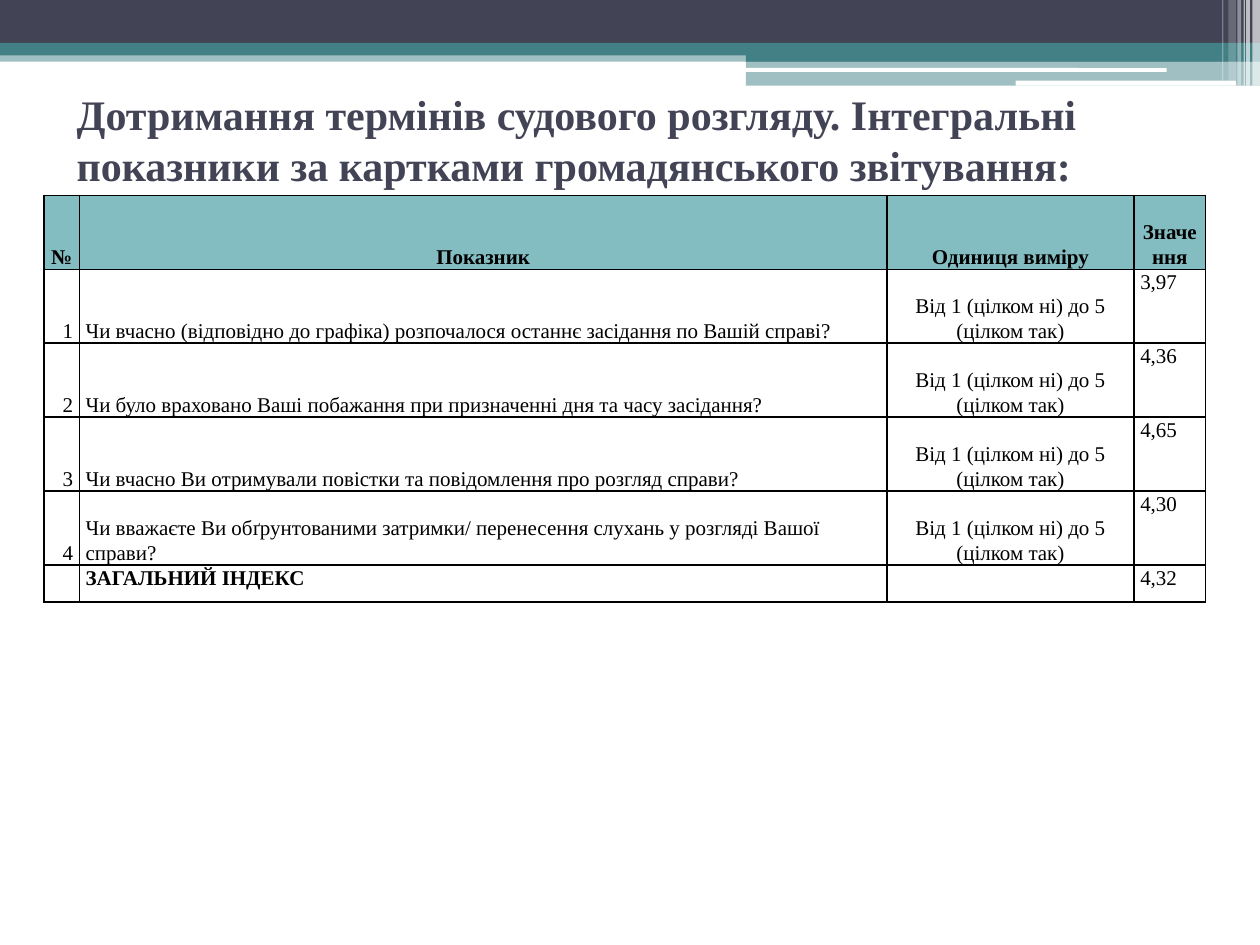
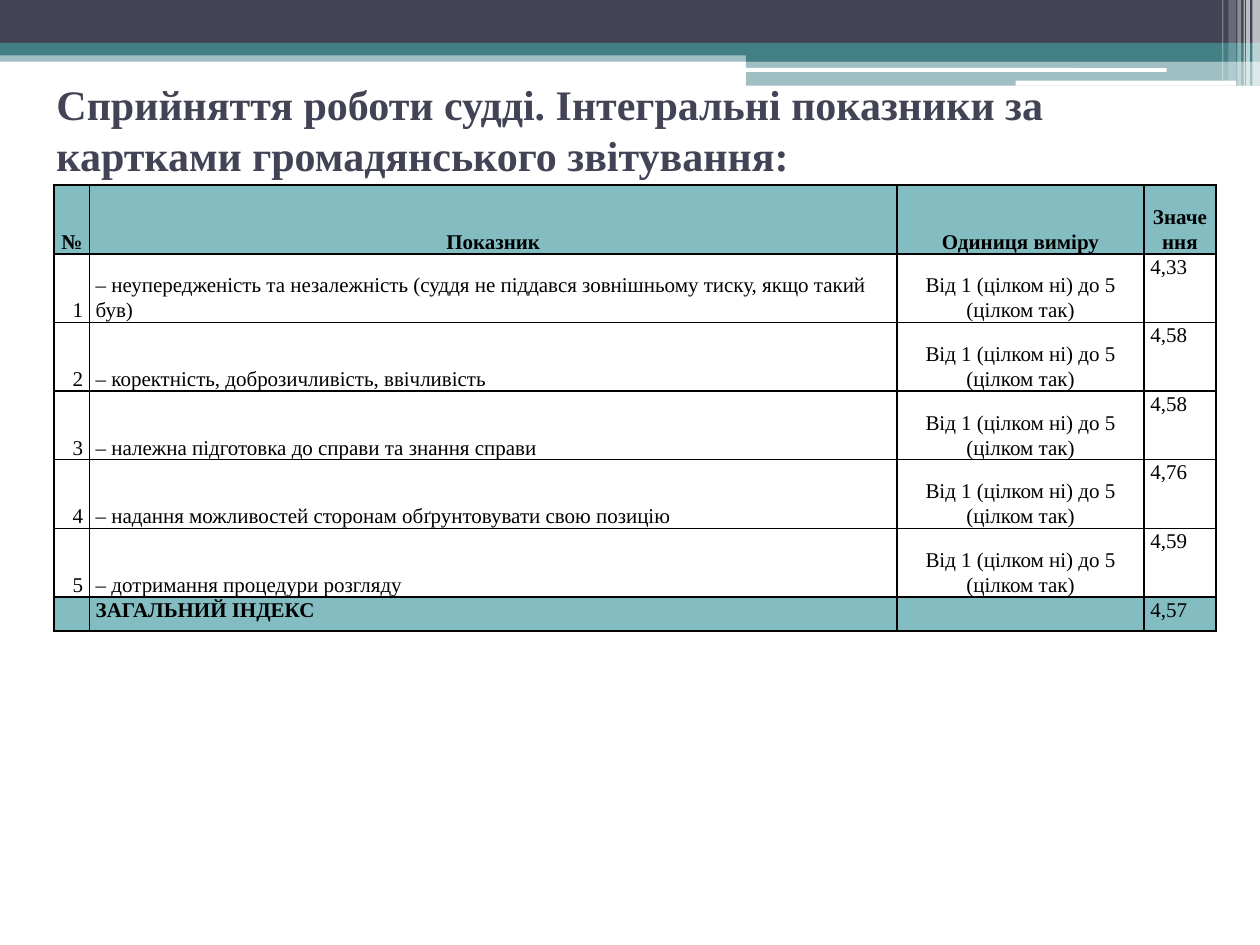
from dataclasses import dataclass

from lxml.etree import SubElement
from pptx import Presentation
from pptx.dml.color import RGBColor
from pptx.enum.shapes import MSO_SHAPE as Shape
from pptx.enum.text import MSO_ANCHOR as Anchor, PP_ALIGN as Align
from pptx.oxml.ns import qn
from pptx.util import Inches, Pt

FONT = "Times New Roman"
NAVY, TEAL, AQUA, WHITE, BLACK = "424456", "438086", "83BCC1", "FFFFFF", "000000"

HEADERS = ("№", "Показник", "Одиниця виміру", "Значення")
UNIT = "Від 1 (цілком ні) до 5 (цілком так)"
INDEX_LABEL = "ЗАГАЛЬНИЙ ІНДЕКС"
COLUMN_WIDTHS = (0.28, 6.41, 1.96, 0.57)
COLUMN_ALIGNS = (Align.RIGHT, Align.LEFT, Align.CENTER, Align.LEFT)
VALUE_COLUMN = 3


@dataclass(frozen=True)
class Band:
    left: float
    top: float
    width: float
    height: float
    color: str
    opacity: int = 100
    rounded: bool = False


@dataclass(frozen=True)
class Indicator:
    question: str
    value: str


@dataclass(frozen=True)
class Report:
    title: str
    title_area: tuple[float, float, float, float]
    table_left: float
    table_top: float
    table_height: float
    indicators: tuple[Indicator, ...]
    index_value: str
    index_fill: str | None = None


BANDS = (
    Band(0, 0.4, 10, 0.09, TEAL, 50),
    Band(0, 0, 10, 0.34, NAVY),
    Band(0, 0.34, 10, 0.1, TEAL),
    Band(5.92, 0.39, 4.08, 0.1, TEAL),
    Band(5.92, 0.48, 4.08, 0.2, TEAL, 50),
    Band(5.91, 0.54, 3.35, 0.03, WHITE, rounded=True),
    Band(8.06, 0.64, 1.75, 0.04, WHITE, rounded=True),
    Band(9.94, 0, 0.06, 0.68, WHITE, 65),
    Band(9.89, 0, 0.03, 0.68, WHITE, 65),
    Band(9.87, 0, 0.01, 0.68, WHITE, 60),
    Band(9.82, 0, 0.03, 0.68, WHITE, 40),
    Band(9.75, 0, 0.06, 0.64, WHITE, 20),
    Band(9.7, 0, 0.01, 0.64, WHITE, 30),
)

REPORTS = (
    Report(
        "Дотримання термінів судового розгляду. Інтегральні показники за "
        "картками громадянського звітування:",
        (0.51, 0.52, 9.69, 1.17), 0.35, 1.55, 3.23,
        (
            Indicator("Чи вчасно (відповідно до графіка) розпочалося останнє "
                      "засідання по Вашій справі?", "3,97"),
            Indicator("Чи було враховано Ваші побажання при призначенні дня "
                      "та часу засідання?", "4,36"),
            Indicator("Чи вчасно Ви отримували повістки та повідомлення "
                      "про розгляд справи?", "4,65"),
            Indicator("Чи вважаєте Ви обґрунтованими затримки/ перенесення "
                      "слухань у розгляді Вашої справи?", "4,30"),
        ),
        "4,32",
    ),
    Report(
        "Сприйняття роботи судді. Інтегральні показники за картками "
        "громадянського звітування:",
        (0.35, 0.44, 9.3, 1.17), 0.43, 1.47, 3.54,
        (
            Indicator("– неупередженість та незалежність (суддя не піддався "
                      "зовнішньому тиску, якщо такий був)", "4,33"),
            Indicator("– коректність, доброзичливість, ввічливість", "4,58"),
            Indicator("– належна підготовка до справи та знання справи", "4,58"),
            Indicator("– надання можливостей сторонам обґрунтовувати свою "
                      "позицію", "4,76"),
            Indicator("– дотримання процедури розгляду", "4,59"),
        ),
        "4,57", AQUA,
    ),
)


def paint(fill, color: str) -> None:
    fill.solid()
    fill.fore_color.rgb = RGBColor.from_string(color)


def style_text(para, size: int, color: str, bold: bool) -> None:
    for span in para.runs:
        span.font.name = FONT
        span.font.size = Pt(size)
        span.font.bold = bold
        span.font.color.rgb = RGBColor.from_string(color)


def draw_band(slide, band: Band) -> None:
    kind = Shape.ROUNDED_RECTANGLE if band.rounded else Shape.RECTANGLE
    area = (band.left, band.top, band.width, band.height)
    shape = slide.shapes.add_shape(kind, *map(Inches, area))
    shape.shadow.inherit = False
    shape.line.fill.background()
    paint(shape.fill, band.color)
    if band.opacity < 100:
        color = next(shape._element.spPr.iter(qn("a:srgbClr")))
        SubElement(color, qn("a:alpha"), val=str(band.opacity * 1000))


def draw_title(slide, report: Report) -> None:
    box = slide.shapes.add_textbox(*map(Inches, report.title_area))
    frame = box.text_frame
    frame.word_wrap = True
    frame.vertical_anchor = Anchor.MIDDLE
    frame.text = report.title
    style_text(frame.paragraphs[0], 24, NAVY, True)


def add_borders(cell) -> None:
    properties = cell._tc.get_or_add_tcPr()
    for side in ("lnL", "lnR", "lnT", "lnB"):
        line = SubElement(properties, qn(f"a:{side}"), w=str(Pt(1)))
        SubElement(SubElement(line, qn("a:solidFill")), qn("a:srgbClr"), val=BLACK)


def fill_cell(cell, text: str, align: Align, anchor: Anchor, bold: bool,
              color: str | None) -> None:
    cell.margin_left = cell.margin_right = Inches(0.05)
    cell.margin_top = cell.margin_bottom = 0
    cell.vertical_anchor = anchor
    add_borders(cell)
    if color:
        paint(cell.fill, color)
    else:
        cell.fill.background()
    para = cell.text_frame.paragraphs[0]
    para.alignment = align
    para.line_spacing = 1.07
    if text:
        para.text = text
        style_text(para, 12, BLACK, bold)
    else:
        # Keeps an empty cell from stretching its row
        SubElement(para._p, qn("a:endParaRPr"), sz="1200")


def draw_table(slide, report: Report) -> None:
    """Draw the indicators; the index row is half as high as the others."""
    indicators = [(str(number), item.question, UNIT, item.value)
                  for number, item in enumerate(report.indicators, 1)]
    rows = [HEADERS, *indicators, ("", INDEX_LABEL, "", report.index_value)]
    last = len(rows) - 1
    row_height = report.table_height / (last + 0.5)

    table = slide.shapes.add_table(
        len(rows), len(HEADERS), Inches(report.table_left), Inches(report.table_top),
        Inches(sum(COLUMN_WIDTHS)), Inches(report.table_height)).table
    table.first_row = table.horz_banding = False
    for column, width in zip(table.columns, COLUMN_WIDTHS):
        column.width = Inches(width)

    for r, texts in enumerate(rows):
        is_header, is_index = r == 0, r == last
        table.rows[r].height = Inches(row_height / 2 if is_index else row_height)
        color = AQUA if is_header else report.index_fill if is_index else None
        for c, text in enumerate(texts):
            is_value = c == VALUE_COLUMN and not is_header
            fill_cell(
                table.cell(r, c), text,
                Align.CENTER if is_header else COLUMN_ALIGNS[c],
                Anchor.TOP if is_value or is_index else Anchor.BOTTOM,
                is_header or (is_index and not is_value),
                color)
            if is_value:
                table.cell(r, c).text_frame.paragraphs[0].space_after = Pt(8)


def main() -> None:
    deck = Presentation()
    deck.slide_width, deck.slide_height = Inches(10), Inches(7.5)
    for report in REPORTS:
        slide = deck.slides.add_slide(deck.slide_layouts[6])
        for band in BANDS:
            draw_band(slide, band)
        draw_title(slide, report)
        draw_table(slide, report)
    deck.save("out.pptx")


if __name__ == "__main__":
    main()
